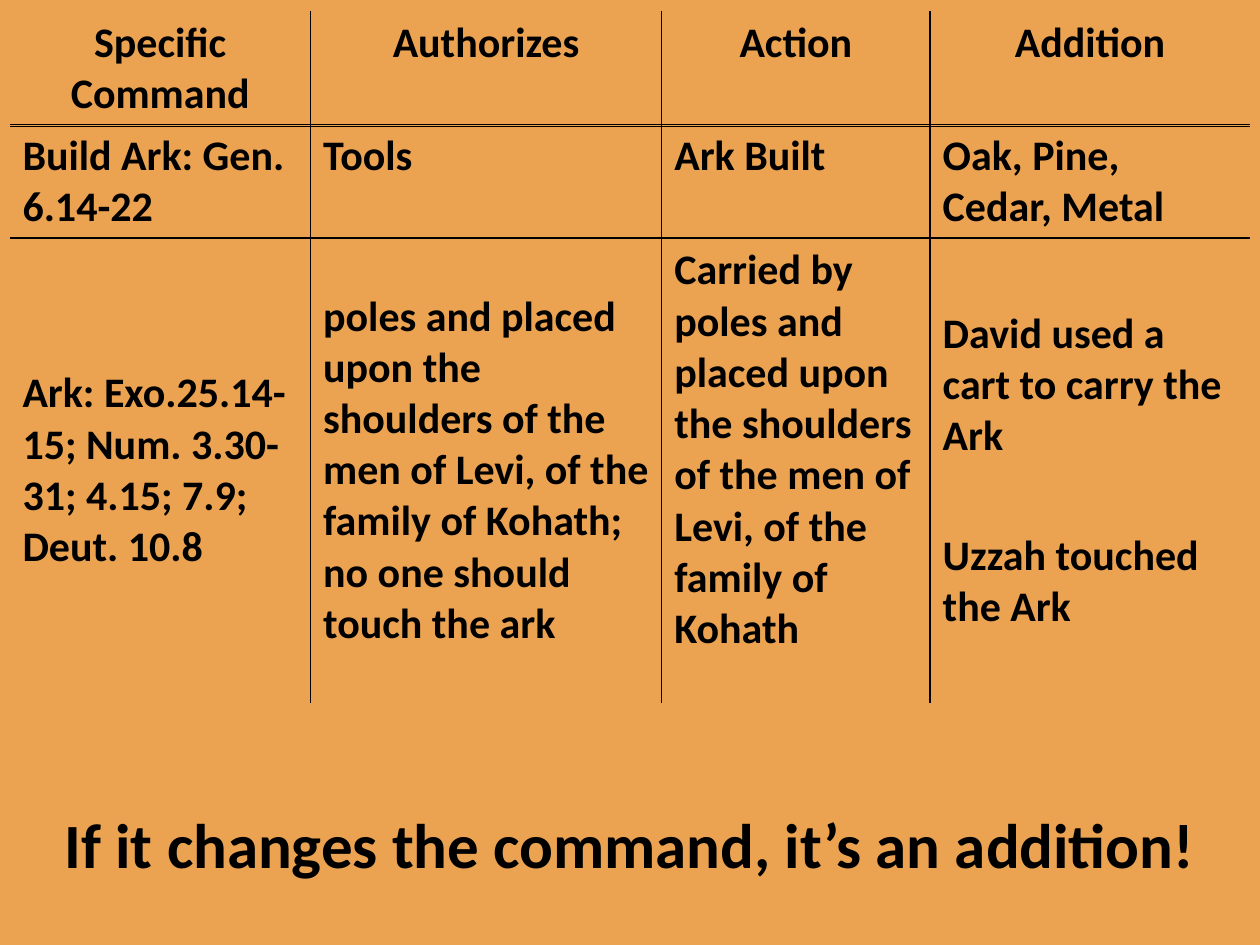
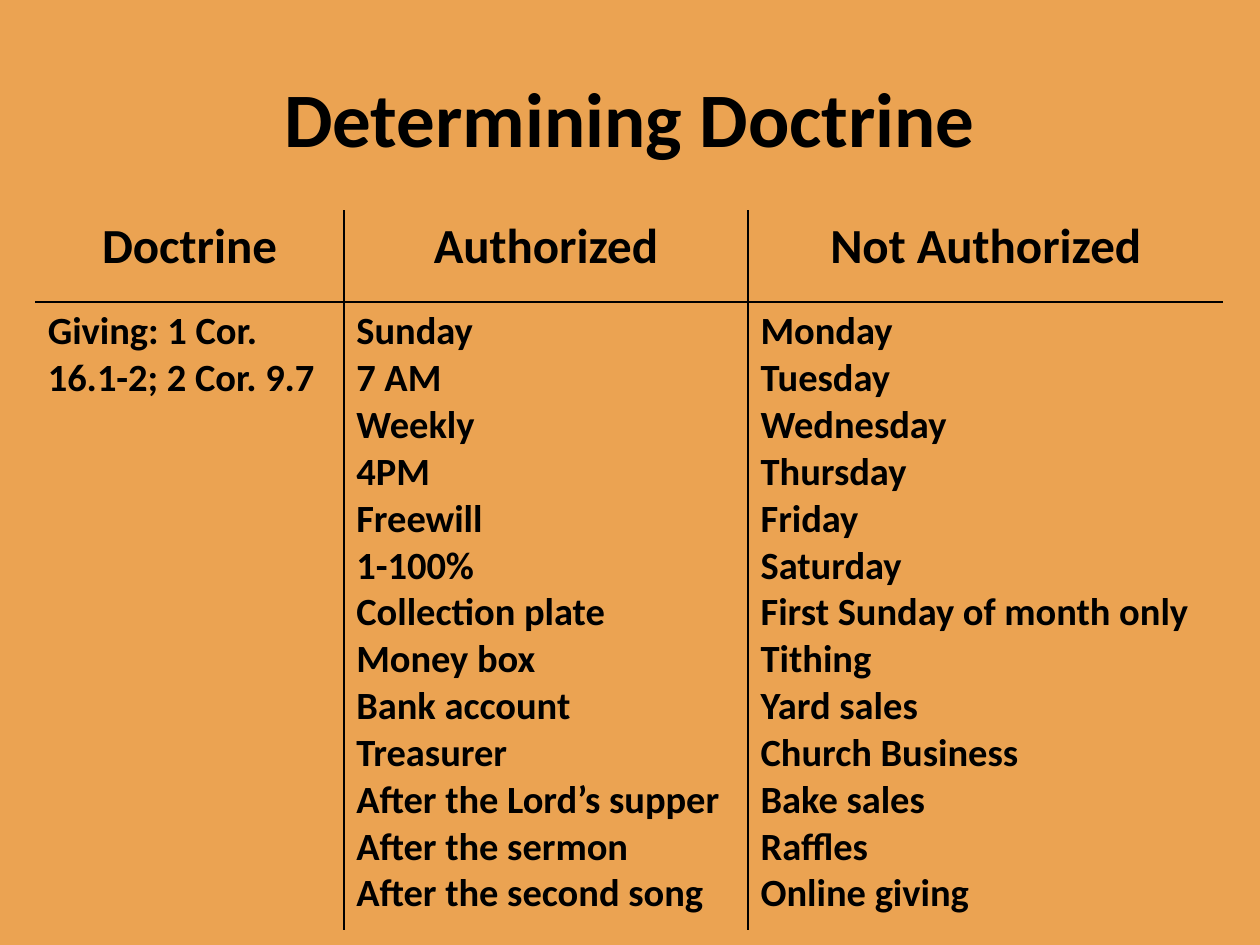
import pptx
import pptx.dml.color
import pptx.enum.shapes
import pptx.enum.text
import pptx.oxml
import pptx.oxml.ns
import pptx.util
from lxml import etree

Cm, Pt = pptx.util.Cm, pptx.util.Pt
ALIGN = pptx.enum.text.PP_ALIGN
ANCHOR = pptx.enum.text.MSO_ANCHOR

FONT = "Calibri"
BLACK, ORANGE = "000000", "EBA352"
SLIDE_WIDTH, SLIDE_HEIGHT = 25.4, 19.05
PLAIN_STYLE = "{2D5ABB26-0587-4C30-8999-92F81FD0307C}"

# Slide 1: each cell is a list of paragraphs.
COMMAND_HEADINGS = [["Specific Command"], ["Authorizes"], ["Action"], ["Addition"]]
BUILDING = [["Build Ark: Gen. 6.14-22"], ["Tools"], ["Ark Built"],
            ["Oak, Pine,", "Cedar, Metal"]]
CARRYING = [
    ["Ark: Exo.25.14-15; Num. 3.30-31; 4.15; 7.9; Deut. 10.8"],
    ["poles and placed upon the shoulders of the men of Levi, of the family "
     "of Kohath; no one should touch the ark"],
    ["Carried by poles and placed upon the shoulders of the men of Levi, "
     "of the family of Kohath"],
    ["David used a cart to carry the Ark", "Uzzah touched the Ark"],
]
CONCLUSION = "If it changes the command, it’s an addition!"
COMMAND_LEFT = 0.2
COMMAND_WIDTHS = [6.06, 7.08, 5.41, 6.45]

# Slide 2: heading, entries, column width, outer edges that are ruled.
DOCTRINE_TITLE = "Determining Doctrine"
DOCTRINE_COLUMNS = [
    ("Doctrine", ["Giving: 1 Cor. 16.1-2; 2 Cor. 9.7"], 6.22, "R"),
    ("Authorized",
     ["Sunday", "7 AM", "Weekly", "4PM", "Freewill", "1-100%", "Collection plate",
      "Money box", "Bank account", "Treasurer", "After the Lord’s supper",
      "After the sermon", "After the second song"], 8.15, "LR"),
    ("Not Authorized",
     ["Monday", "Tuesday", "Wednesday", "Thursday", "Friday", "Saturday",
      "First Sunday of month only", "Tithing", "Yard sales", "Church Business",
      "Bake sales", "Raffles", "Online giving"], 9.58, "L"),
]
DOCTRINE_LEFT, DOCTRINE_TOP = 0.71, 4.24
DOCTRINE_HEIGHTS = [1.85, 12.65]


def color(value):
    return pptx.dml.color.RGBColor.from_string(value)


def write(frame, lines, size, align=ALIGN.LEFT):
    """Fill a text frame with bold black paragraphs."""
    frame.word_wrap = True
    frame.text = "\n".join(lines)
    for paragraph in frame.paragraphs:
        paragraph.alignment = align
        for run in paragraph.runs:
            run.font.name = FONT
            run.font.size = Pt(size)
            run.font.bold = True
            run.font.color.rgb = color(BLACK)


def rule_edges(cell, edges):
    """Draw a thin black line on the given cell edges (L, R, T, B)."""
    properties = cell._tc.get_or_add_tcPr()
    for edge in "LRTB":
        if edge in edges:
            line = etree.SubElement(
                properties, pptx.oxml.ns.qn(f"a:ln{edge}"), w=str(Pt(1)))
            fill = etree.SubElement(line, pptx.oxml.ns.qn("a:solidFill"))
            etree.SubElement(fill, pptx.oxml.ns.qn("a:srgbClr"), val=BLACK)


def add_grid(slide, left, top, widths, heights, rows, sizes, outer, heading=False):
    """Add a table ruled between its cells and on the named outer edges."""
    table = slide.shapes.add_table(
        len(rows), len(widths), Cm(left), Cm(top),
        Cm(sum(widths)), Cm(sum(heights))).table
    table.first_row = table.horz_banding = False
    table._tbl.tblPr.find(pptx.oxml.ns.qn("a:tableStyleId")).text = PLAIN_STYLE
    for column, width in zip(table.columns, widths):
        column.width = Cm(width)
    last_row, last_column = len(rows) - 1, len(widths) - 1
    for r, (row, height, size) in enumerate(zip(rows, heights, sizes)):
        table.rows[r].height = Cm(height)
        for c, lines in enumerate(row):
            cell = table.cell(r, c)
            inner = {"L": c > 0, "R": c < last_column, "T": r > 0, "B": r < last_row}
            rule_edges(cell, [e for e in inner if inner[e] or e in outer])
            cell.fill.background()
            centred = heading and r == 0
            write(cell.text_frame, lines, size, ALIGN.CENTER if centred else ALIGN.LEFT)
    return table


def add_slide(deck):
    slide = deck.slides.add_slide(deck.slide_layouts[6])
    backdrop = slide.shapes.add_shape(
        pptx.enum.shapes.MSO_SHAPE.RECTANGLE, 0, 0, deck.slide_width, deck.slide_height)
    backdrop.shadow.inherit = False
    backdrop.fill.solid()
    backdrop.fill.fore_color.rgb = color(ORANGE)
    backdrop.line.fill.background()
    return slide


def add_caption(slide, text, left, top, width, height, size):
    frame = slide.shapes.add_textbox(Cm(left), Cm(top), Cm(width), Cm(height)).text_frame
    frame.vertical_anchor = ANCHOR.MIDDLE
    write(frame, [text], size, ALIGN.CENTER)


def build_commands(deck):
    slide = add_slide(deck)

    def add_band(top, height, cells, outer, heading=False):
        return add_grid(slide, COMMAND_LEFT, top, COMMAND_WIDTHS, [height],
                        [cells], [24], outer, heading)

    add_band(0.23, 2.28, COMMAND_HEADINGS, "B", heading=True)
    add_caption(slide, CONCLUSION, 0, 16.1, SLIDE_WIDTH, 1.8, 36)
    add_band(2.51, 2.28, BUILDING, "TB")
    carrying = add_band(4.8, 9.37, CARRYING, "T")
    for cell in carrying.iter_cells():
        cell.vertical_anchor = ANCHOR.MIDDLE
    carrying.cell(0, 2).margin_bottom = Cm(0.95)
    carrying.cell(0, 3).text_frame.paragraphs[1].space_before = Pt(39)


def build_doctrine(deck):
    slide = add_slide(deck)
    add_caption(slide, DOCTRINE_TITLE, 1.27, 0.76, 22.86, 3.18, 44)
    left = DOCTRINE_LEFT
    for heading, entries, width, outer in DOCTRINE_COLUMNS:
        add_grid(slide, left, DOCTRINE_TOP, [width], DOCTRINE_HEIGHTS,
                 [[[heading]], [entries]], [28, 22], outer, heading=True)
        left += width


def main():
    deck = pptx.Presentation()
    deck.slide_width, deck.slide_height = Cm(SLIDE_WIDTH), Cm(SLIDE_HEIGHT)
    build_commands(deck)
    build_doctrine(deck)
    deck.save("out.pptx")


if __name__ == "__main__":
    main()
